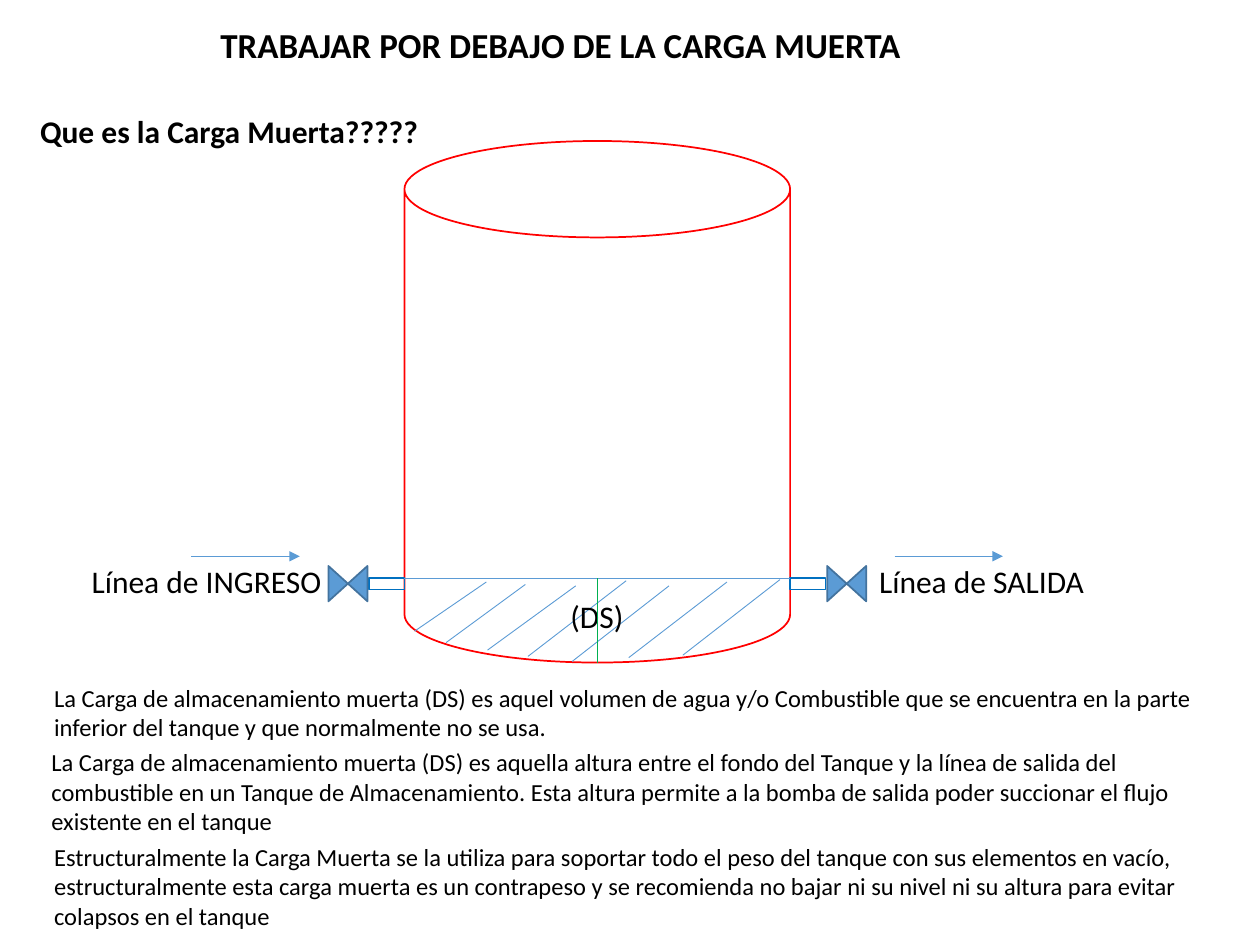
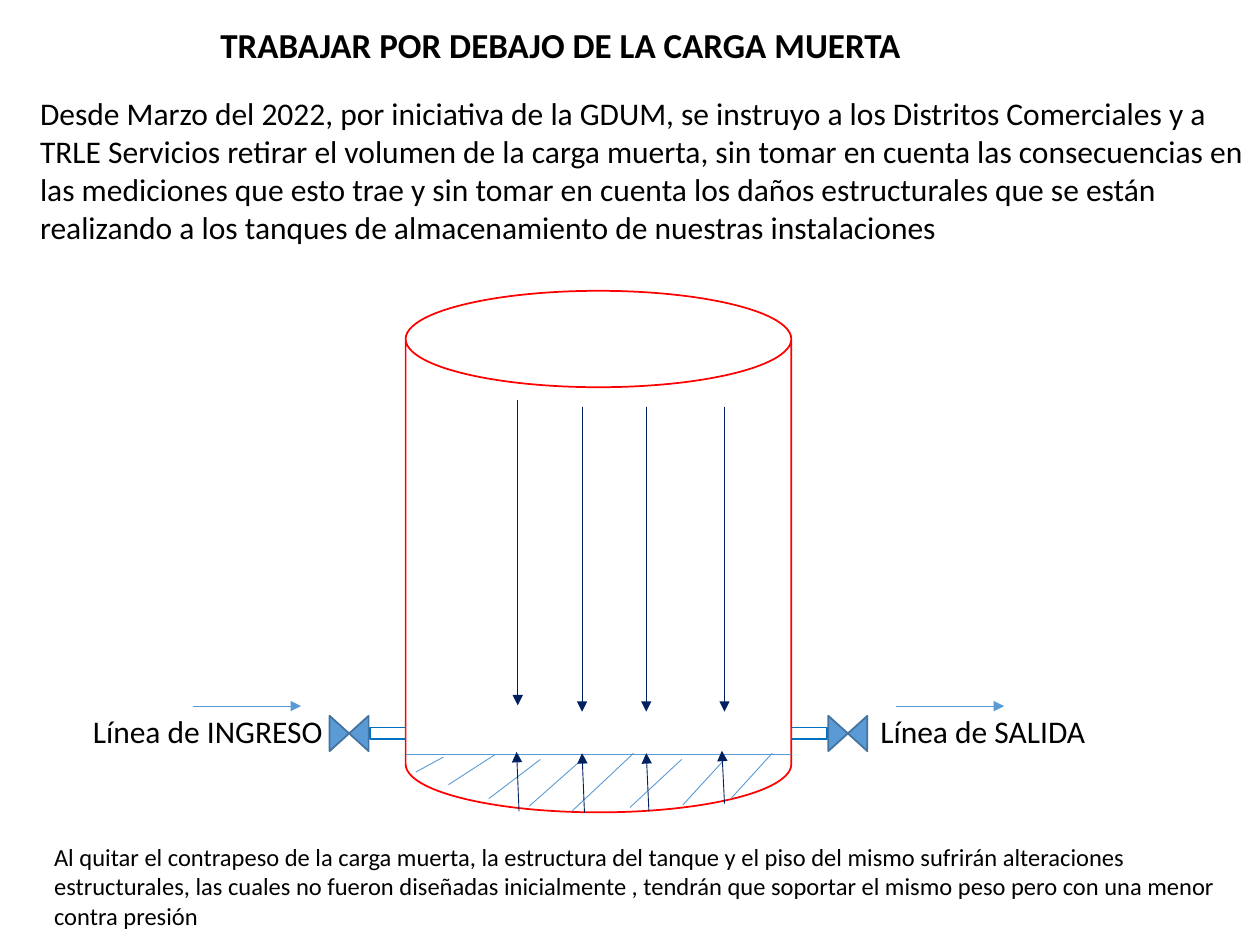
from dataclasses import dataclass

from lxml.etree import SubElement
from pptx import Presentation
from pptx.dml.color import RGBColor
from pptx.enum.shapes import MSO_CONNECTOR, MSO_SHAPE
from pptx.oxml.ns import qn
from pptx.util import Pt


@dataclass(frozen=True)
class Theme:
    font: str = "Calibri"
    text: str = "000000"
    tank: str = "FF0000"
    pipe: str = "0070C0"
    flow: str = "5B9BD5"
    valve_edge: str = "43739E"
    depth: str = "00B050"
    force: str = "002060"
    title_size: int = 20
    label_size: int = 18
    note_size: int = 14
    outline: float = 1
    hairline: float = 0.5


THEME = Theme()
TITLE = "TRABAJAR POR DEBAJO DE LA CARGA MUERTA"
TITLE_BOX = (118.8, 10, 451.4, 31.7)
BOTTOM_NOTE_BOX = (23.8, 477.4, 678.2, 58.3)
TANK_SIZE = (220.4, 298)

# Lines inside the tank, as x1, y1, x2, y2 from its top left corner
FULL_HATCHING = [
    (5.8, 280.1, 46.8, 252),
    (23.8, 286.6, 69.1, 253.4),
    (47.5, 290.9, 97.9, 254.2),
    (70.6, 294.5, 126.7, 251.3),
    (95.8, 297.4, 151.2, 254.2),
    (128.2, 295.2, 184.3, 252),
    (159.1, 293.8, 214.6, 250.6),
]
LOW_HATCHING = [
    (5.8, 275, 21.6, 266.4),
    (24.5, 282.2, 51.1, 265),
    (47.5, 290.2, 77, 267.8),
    (70.6, 294.5, 100.8, 267.8),
    (95, 297.4, 130.3, 264.2),
    (128.2, 295.2, 157.7, 267.8),
    (158.4, 293.8, 182.2, 267.8),
    (185.8, 290.2, 209.5, 264.2),
]
LOAD_LENGTH = 174.3
LOAD_STARTS = [(64.1, 62.6), (100.8, 66.2), (137.5, 66.2), (182.2, 66.2)]
REACTIONS = [
    (64.8, 297.4, 63.4, 263.5),
    (102.2, 298.1, 100.8, 264.2),
    (139, 297.4, 137.5, 264.2),
    (182.2, 293, 180.7, 262.8),
]


def add_text(slide, box, text, size, bold=False, wrap=True):
    frame = slide.shapes.add_textbox(*map(Pt, box)).text_frame
    frame.word_wrap = wrap
    paragraph = frame.paragraphs[0]
    paragraph.text = text
    font = paragraph.font
    font.name, font.size, font.bold = THEME.font, Pt(size), bold
    font.color.rgb = RGBColor.from_string(THEME.text)


def add_outline(slide, preset, box, edge, fill=None):
    shape = slide.shapes.add_shape(preset, *map(Pt, box))
    shape.shadow.inherit = False
    shape.line.color.rgb = RGBColor.from_string(edge)
    shape.line.width = Pt(THEME.outline)
    if fill:
        shape.fill.solid()
        shape.fill.fore_color.rgb = RGBColor.from_string(fill)
    else:
        shape.fill.background()
    return shape


def add_line(slide, origin, ends, color, arrow=False):
    """Draw x1, y1, x2, y2 measured from the origin."""
    left, top = origin
    x1, y1, x2, y2 = ends
    line = slide.shapes.add_connector(
        MSO_CONNECTOR.STRAIGHT,
        Pt(left + x1), Pt(top + y1), Pt(left + x2), Pt(top + y2))
    line.line.color.rgb = RGBColor.from_string(color)
    line.line.width = Pt(THEME.hairline)
    if arrow:
        SubElement(line.line._get_or_add_ln(), qn("a:tailEnd"), type="triangle")
    SubElement(line._element.spPr, qn("a:effectLst"))


def add_branch(slide, tank_box, side, label, label_x, arrow_x):
    """Draw pipe, valve, label and flow arrow; side is -1 left, 1 right."""
    left, top, width, _ = tank_box
    pipe_width, pipe_height = 20.2, 6.6
    valve_width, valve_height = 20.2, 22.3
    pipe_y = top + 249.6
    middle = left + width / 2
    pipe_center = middle + side * (width + pipe_width) / 2
    valve_center = middle + side * (width / 2 + 32.3)
    add_outline(slide, MSO_SHAPE.RECTANGLE,
                (pipe_center - pipe_width / 2, pipe_y, pipe_width, pipe_height),
                THEME.pipe)
    valve = add_outline(slide, MSO_SHAPE.FLOWCHART_COLLATE,
                        (valve_center - valve_width / 2,
                         pipe_y + (pipe_height - valve_height) / 2,
                         valve_width, valve_height),
                        THEME.valve_edge, THEME.flow)
    valve.rotation = 90
    add_text(slide, (left + label_x, top + 237.3, 175.7, 28.8), label,
             THEME.label_size)
    add_line(slide, (left, top), (arrow_x, 237.3, arrow_x + 61.9, 237.3),
             THEME.flow, arrow=True)


def add_tank(slide, tank_box, level, hatching):
    """Draw the tank, its two branches and the dead load below the level."""
    origin = tank_box[:2]
    add_outline(slide, MSO_SHAPE.CAN, tank_box, THEME.tank)
    add_branch(slide, tank_box, 1, "Línea de SALIDA", 264.2, 280.1)
    add_branch(slide, tank_box, -1, "Línea de INGRESO", -185.8, -121.7)
    for ends in [(0, level, tank_box[2], level), *hatching]:
        add_line(slide, origin, ends, THEME.flow)


def add_depth_mark(slide, tank_box, level):
    left, top, width, height = tank_box
    add_text(slide, (left + 87.8, top + 257, 49.7, 28.8), "(DS)",
             THEME.label_size, wrap=False)
    add_line(slide, (left, top), (width / 2, level, width / 2, height),
             THEME.depth)


def add_forces(slide, tank_box):
    loads = [(x, y, x, y + LOAD_LENGTH) for x, y in LOAD_STARTS]
    for ends in loads + REACTIONS:
        add_line(slide, tank_box[:2], ends, THEME.force, arrow=True)


def add_titled_slide(deck):
    slide = deck.slides.add_slide(deck.slide_layouts[6])
    add_text(slide, TITLE_BOX, TITLE, THEME.title_size, bold=True)
    return slide


def build_definition(deck):
    slide = add_titled_slide(deck)
    tank_box = (231.1, 80.6, *TANK_SIZE)
    level = 249.8
    add_tank(slide, tank_box, level, FULL_HATCHING)
    add_depth_mark(slide, tank_box, level)
    add_text(slide, (15.8, 60.5, 239, 28.8), "Que es la Carga Muerta?????",
             THEME.label_size, bold=True)
    notes = [
        ((23.8, 386.6, 689.8, 41),
         "La Carga de almacenamiento muerta (DS) es aquel volumen de agua y/o "
         "Combustible que se encuentra en la parte inferior del tanque y que "
         "normalmente no se usa."),
        ((22.3, 423.4, 681.1, 58.3),
         "La Carga de almacenamiento muerta (DS) es aquella altura entre el "
         "fondo del Tanque y la línea de salida del combustible en un Tanque "
         "de Almacenamiento. Esta altura permite a la bomba de salida poder "
         "succionar el flujo existente en el tanque"),
        (BOTTOM_NOTE_BOX,
         "Estructuralmente la Carga Muerta se la utiliza para soportar todo "
         "el peso del tanque con sus elementos en vacío, estructuralmente "
         "esta carga muerta es un contrapeso y se recomienda no bajar ni su "
         "nivel ni su altura para evitar colapsos en el tanque"),
    ]
    for box, note in notes:
        add_text(slide, box, note, THEME.note_size)


def build_consequences(deck):
    slide = add_titled_slide(deck)
    tank_box = (231.8, 166.2, *TANK_SIZE)
    add_tank(slide, tank_box, 265, LOW_HATCHING)
    add_forces(slide, tank_box)
    add_text(slide, (15.8, 50.4, 704.2, 94.3),
             "Desde Marzo del 2022, por iniciativa de la GDUM, se instruyo a "
             "los Distritos Comerciales y a TRLE Servicios retirar el volumen "
             "de la carga muerta, sin tomar en cuenta las consecuencias en las "
             "mediciones que esto trae y sin tomar en cuenta los daños "
             "estructurales que se están realizando a los tanques de "
             "almacenamiento de nuestras instalaciones", THEME.label_size)
    add_text(slide, BOTTOM_NOTE_BOX,
             "Al quitar el contrapeso de la carga muerta, la estructura del "
             "tanque y el piso del mismo sufrirán alteraciones estructurales, "
             "las cuales no fueron diseñadas inicialmente , tendrán que "
             "soportar el mismo peso pero con una menor contra presión",
             THEME.note_size)


def main():
    deck = Presentation()
    deck.slide_width, deck.slide_height = Pt(720), Pt(540)
    build_definition(deck)
    build_consequences(deck)
    deck.save("out.pptx")


if __name__ == "__main__":
    main()
